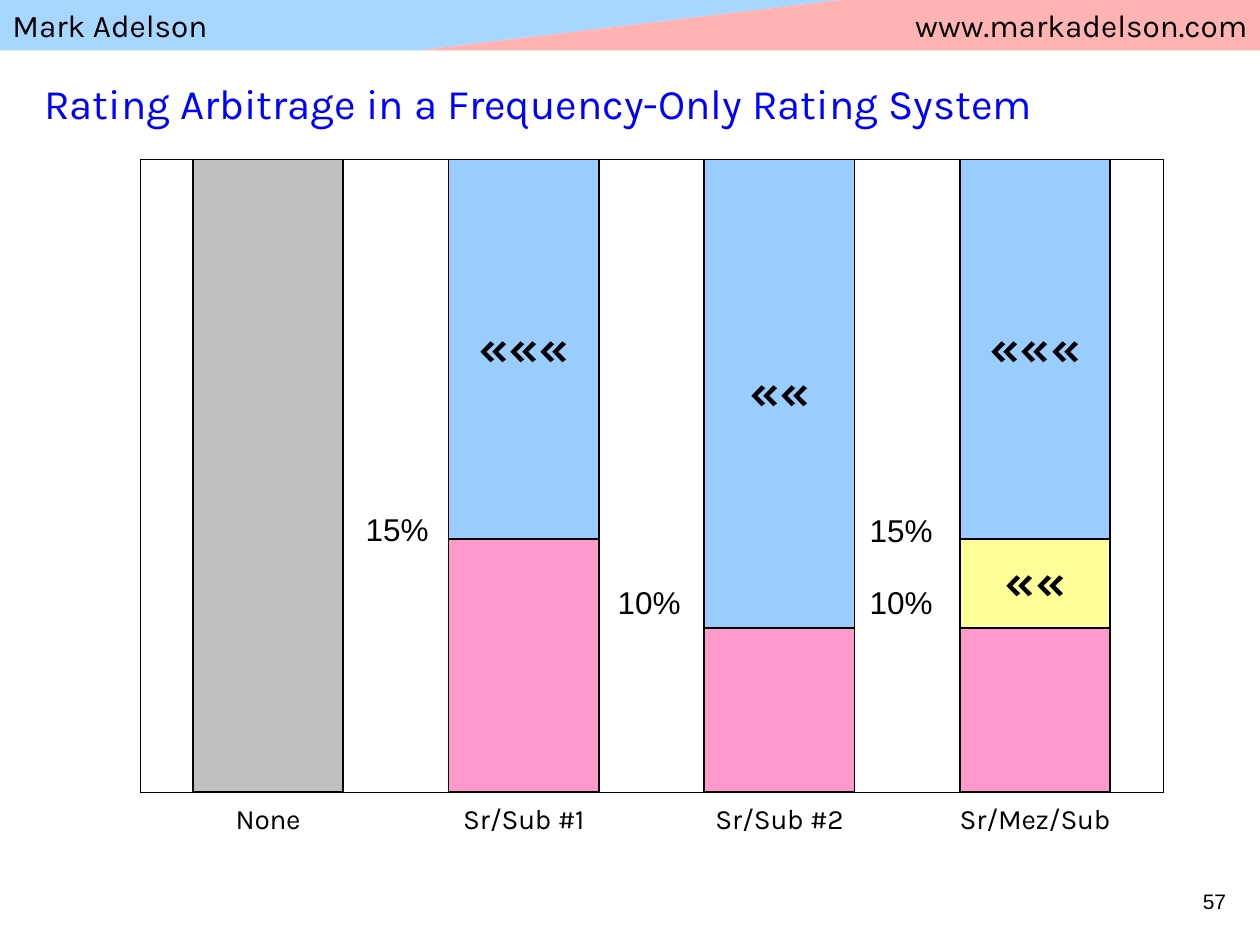
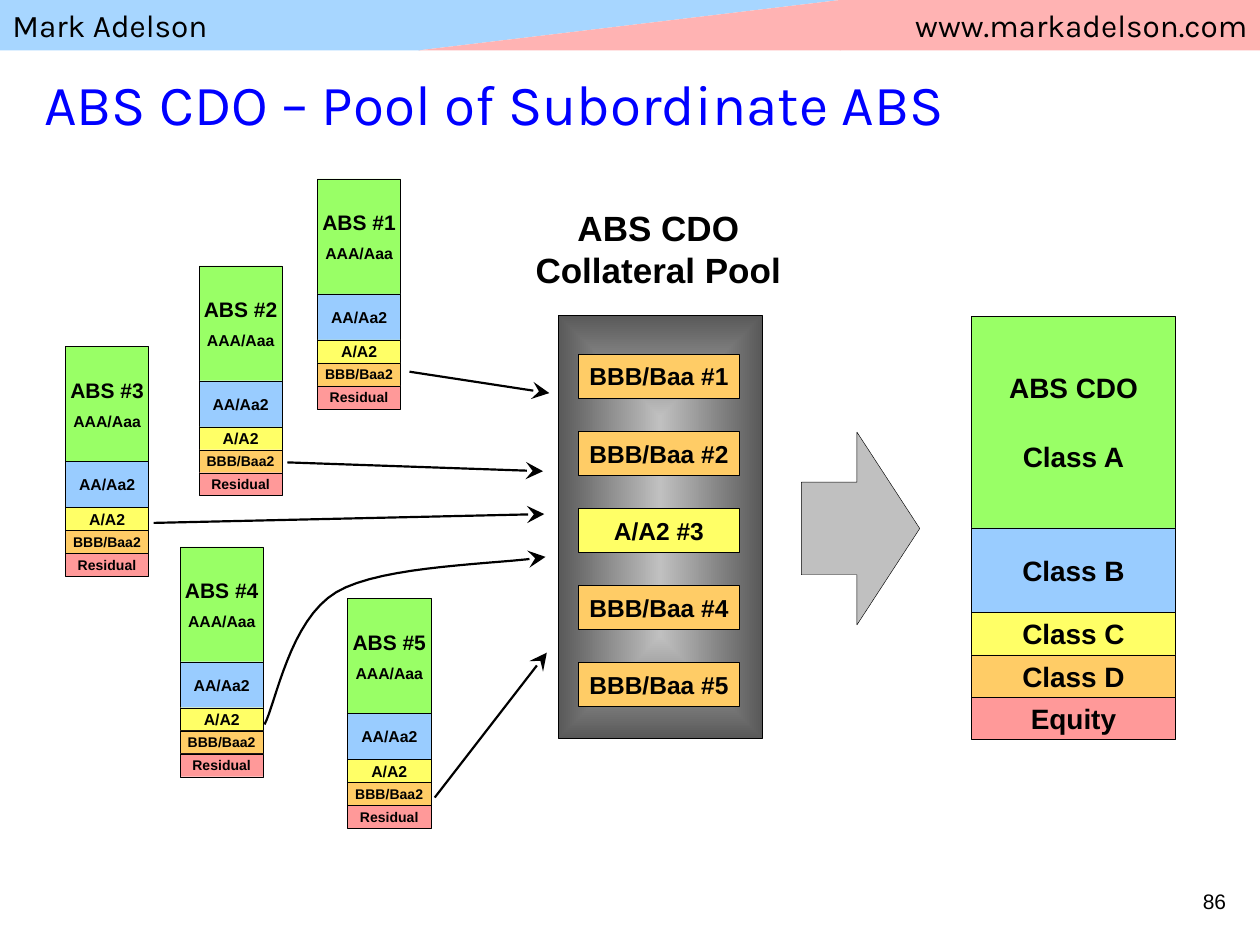
from itertools import pairwise

from lxml import etree
from pptx import Presentation
from pptx import util as u
from pptx.chart.data import CategoryChartData
from pptx.dml.color import RGBColor
from pptx.enum import chart as ch
from pptx.enum import shapes as sh
from pptx.enum import text as tx
from pptx.oxml import parse_xml
from pptx.oxml.ns import nsdecls, qn

CELL = u.Inches(0.1)
COLS, ROWS = 100, 75
BAND = 4
HEAD, BODY = "Karla", "Arial"
HUES = {
    "ink": "000000", "title": "0000FF", "sky": "A7D6FF", "rose": "FFB3B3",
    "green": "99FF66", "blue": "99CCFF", "yellow": "FFFF66", "orange": "FFCC66",
    "red": "FF9999", "pink": "FF99CC", "cream": "FFFF99", "gray": "C0C0C0",
    "dark": "595959",
}
TIERS = [("green", 5), ("blue", 2), ("yellow", 1), ("orange", 1), ("red", 1)]
LEFT, MID, RIGHT = tx.PP_ALIGN.LEFT, tx.PP_ALIGN.CENTER, tx.PP_ALIGN.RIGHT


def hue(name):
    return RGBColor.from_string(HUES[name])


def grid(*cells):
    return [u.Emu(round(n * CELL)) for n in cells]


def style(font, size, face=BODY, color="ink", bold=False):
    font.size, font.name, font.bold = u.Pt(size), face, bold
    font.color.rgb = hue(color)


def write(frame, lines, align=MID, gap=0, wrap=True, **look):
    frame.word_wrap = wrap
    frame.vertical_anchor = tx.MSO_ANCHOR.MIDDLE
    for i, (words, size) in enumerate(lines):
        para = frame.add_paragraph() if i else frame.paragraphs[0]
        para.alignment = align
        if i < len(lines) - 1:
            para.space_after = u.Pt(gap)
        for j, part in enumerate(words.split("\n")):
            if j:
                para.add_line_break()
            run = para.add_run()
            run.text = part
            style(run.font, size, **look)


def block(slide, kind, at, fill, edge=True):
    shape = slide.shapes.add_shape(kind, *grid(*at))
    shape.shadow.inherit = False
    shape.fill.solid()
    shape.fill.fore_color.rgb = hue(fill)
    if edge:
        ink(shape.line, 0.25)
    else:
        shape.line.fill.background()
    return shape


def box(slide, at, fill, lines=(), gap=0):
    shape = block(slide, sh.MSO_SHAPE.RECTANGLE, at, fill)
    if lines:
        write(shape.text_frame, lines, gap=gap, wrap=False, bold=True)
    return shape


def label(slide, at, words, size, align=RIGHT, **look):
    note = slide.shapes.add_textbox(*grid(*at))
    write(note.text_frame, [(words, size)], align, **look)
    return note


def ink(line, width):
    line.width = u.Pt(width)
    line.color.rgb = hue("ink")


def point(shape):
    ink(shape.line, 1.25)
    tip = etree.SubElement(shape.line._get_or_add_ln(), qn("a:tailEnd"))
    for key, value in (("type", "stealth"), ("w", "lg"), ("len", "lg")):
        tip.set(key, value)


def arrow(slide, *ends):
    line = slide.shapes.add_connector(sh.MSO_CONNECTOR.STRAIGHT, *grid(*ends))
    point(line)
    etree.SubElement(line.element.spPr, qn("a:effectLst"))


def curve(slide, knots, steps=16):
    dots = [knots[0]]
    for k in range(0, len(knots) - 1, 3):
        a, b, c, d = knots[k:k + 4]
        for n in range(1, steps + 1):
            t = n / steps
            s = 1 - t
            dots.append([s**3 * p + 3 * s * s * t * q + 3 * s * t * t * r + t**3 * e
                         for p, q, r, e in zip(a, b, c, d)])
    spots = [grid(*dot) for dot in dots]
    path = slide.shapes.build_freeform(*spots[0])
    path.add_line_segments(spots[1:], close=False)
    shape = path.convert_to_shape()
    shape.shadow.inherit = False
    shape.fill.background()
    point(shape)


def stack(slide, at, tiers, gap):
    left, top, width, height = at
    unit = height / sum(share for _, share in TIERS)
    for (fill, share), lines in zip(TIERS, tiers):
        box(slide, (left, top, width, unit * share), fill, lines, gap)
        top += unit * share


def bands(slide):
    layout = slide.slide_layout
    for spare in list(layout.placeholders):
        if spare.placeholder_format.type != sh.PP_PLACEHOLDER.TITLE:
            layout.shapes.element.remove(spare.element)
    third = COLS / 3
    parts = []
    for left, fill, words, align in (
            (0, "sky", "Mark Adelson", LEFT),
            (2 * third, "rose", "www.markadelson.com", RIGHT)):
        band = block(slide, sh.MSO_SHAPE.RECTANGLE, (left, 0, third, BAND), fill, False)
        write(band.text_frame, [(words, 18)], align, wrap=False, face=HEAD)
        parts.append(band)
    for fill, flip in (("sky", "flipV"), ("rose", "flipH")):
        wedge = block(slide, sh.MSO_SHAPE.ISOSCELES_TRIANGLE,
                      (third - 0.1, 0, third + 0.15, BAND), fill, False)
        wedge.adjustments[0] = 0
        wedge.element.spPr.find(qn("a:xfrm")).set(flip, "1")
        parts.append(wedge)
    for part in parts:
        layout.shapes.element.append(part.element)


def page(deck, title, size, number):
    slide = deck.slides.add_slide(deck.slide_layouts[5])
    head = slide.shapes.title
    head.left, head.top, head.width, head.height = grid(2.5, 5, 95.8, 6.3)
    write(head.text_frame, [(title, size)], LEFT, face=HEAD, color="title")
    head.text_frame.auto_size = tx.MSO_AUTO_SIZE.NONE
    label(slide, (75, 69.5, 23.3, 4), number, 12)
    return slide


def frame(plot):
    for old in plot.findall(qn("c:layout")):
        plot.remove(old)
    sides = zip("xywh", (0.065, 0.022, 0.89, 0.878))
    modes = "".join(f'<c:{s}Mode val="edge"/>' for s in "xy")
    spans = "".join(f'<c:{s} val="{v}"/>' for s, v in sides)
    plot.insert(0, parse_xml(
        f'<c:layout {nsdecls("c")}><c:manualLayout><c:layoutTarget val="inner"/>'
        f'{modes}{spans}</c:manualLayout></c:layout>'))
    plot.append(parse_xml(
        f'<c:spPr {nsdecls("c", "a")}><a:noFill/><a:ln w="3175"><a:solidFill>'
        f'<a:srgbClr val="{HUES["ink"]}"/></a:solidFill></a:ln></c:spPr>'))


def bars(slide):
    rows = [
        ("Series 1", (0, 40, 26, 26), "pink", {}),
        ("Series 2", (0, 0, 0, 14), "cream", {3: "««"}),
        ("Senior", (0, 60, 74, 60), "blue", {1: "«««", 2: "««", 3: "«««"}),
        ("Series 4", (100, 0, 0, 0), "gray", {}),
    ]
    data = CategoryChartData()
    data.categories = ["None", "Sr/Sub #1", "Sr/Sub #2", "Sr/Mez/Sub"]
    for name, values, _, _ in rows:
        data.add_series(name, values)
    chart = slide.shapes.add_chart(
        ch.XL_CHART_TYPE.COLUMN_STACKED, *grid(5.2, 11.4, 91.2, 57.2), data).chart
    style(chart.font, 16, HEAD)
    chart.has_legend = chart.has_title = False
    plot = chart.plots[0]
    plot.gap_width, plot.overlap, plot.vary_by_categories = 70, 100, False
    for series, (_, _, fill, marks) in zip(plot.series, rows):
        series.format.fill.solid()
        series.format.fill.fore_color.rgb = hue(fill)
        ink(series.format.line, 1)
        for spot, stars in marks.items():
            run = series.points[spot].data_label.text_frame.paragraphs[0].add_run()
            run.text = stars
            style(run.font, 28, HEAD, bold=True)
    for axis in (chart.category_axis, chart.value_axis):
        axis.has_major_gridlines = False
        axis.major_tick_mark = axis.minor_tick_mark = ch.XL_TICK_MARK.NONE
        ink(axis.format.line, 0.25)
    chart.category_axis.tick_label_position = ch.XL_TICK_LABEL_POSITION.LOW
    chart.value_axis.tick_label_position = ch.XL_TICK_LABEL_POSITION.NONE
    chart.value_axis.minimum_scale, chart.value_axis.maximum_scale = 0, 100
    frame(chart.element.find(".//" + qn("c:plotArea")))


def rating(deck):
    slide = page(deck, "Rating Arbitrage in a Frequency-Only Rating System", 24, "57")
    bands(slide)
    bars(slide)
    for left, top, words in ((27.5, 40, "15%"), (67.5, 40.1, "15%"),
                             (67.5, 45.8, "10%"), (47.5, 45.8, "10%")):
        label(slide, (left, top, 7.5, 4), words, 18)


def pool(slide):
    tank = box(slide, (44.3, 25, 16.2, 33.6), "gray")
    tank.fill.gradient()
    for stop, fill in zip(tank.fill.gradient_stops, ("gray", "dark")):
        stop.color.rgb = hue(fill)
    grad = tank.element.spPr.find(qn("a:gradFill"))
    grad.remove(grad.find(qn("a:lin")))
    grad.append(parse_xml(
        f'<a:path {nsdecls("a")} path="shape">'
        '<a:fillToRect l="50000" t="50000" r="50000" b="50000"/></a:path>'))
    for i in range(5):
        fill, grade = ("yellow", "A/A2") if i == 2 else ("orange", "BBB/Baa")
        box(slide, (45.9, 28.1 + 6.12 * i, 12.8, 3.5), fill, [(f"{grade} #{i + 1}", 14)])
    label(slide, (40.9, 15.9, 22.7, 7.7), "ABS CDO\nCollateral Pool", 20, MID, bold=True)


def cdo(deck):
    slide = page(deck, "ABS CDO – Pool of Subordinate ABS", 32.4, "86")
    stack(slide, (77.1, 25.1, 16.2, 33.6),
          [[("ABS CDO", 16), ("Class A", 16)]]
          + [[(name, 16)] for name in ("Class B", "Class C", "Class D", "Equity")], 20)
    pool(slide)
    lower = [[("AA/Aa2", 9)], [("A/A2", 9)], [("BBB/Baa2", 8)], [("Residual", 8)]]
    spots = [(25.2, 14.2), (15.8, 21.1), (5.2, 27.5), (14.3, 43.4), (27.6, 47.5)]
    for i, (left, top) in enumerate(spots, 1):
        senior = [(f"ABS #{i}", 12), ("AAA/Aaa", 9)]
        stack(slide, (left, top, 6.6, 18.25), [senior] + lower, 5)
    for ends in ((32.5, 29.5, 43.6, 31.2), (22.8, 36.7, 43.1, 37.4),
                 (12.2, 41.5, 43.2, 40.8), (34.5, 63.3, 43.4, 51.8)):
        arrow(slide, *ends)
    curve(slide, [(21, 57.5), (21.9, 55.8), (23, 49.2), (26.7, 47),
                  (30.4, 44.8), (39.8, 44.8), (43.3, 44.2)])
    flow = block(slide, sh.MSO_SHAPE.RIGHT_ARROW, (63.6, 34.3, 9.4, 15.3), "gray")
    flow.adjustments[0], flow.adjustments[1] = 0.48, 0.53


def main():
    deck = Presentation()
    deck.slide_width, deck.slide_height = grid(COLS, ROWS)
    rating(deck)
    cdo(deck)
    deck.save("out.pptx")


if __name__ == "__main__":
    main()
